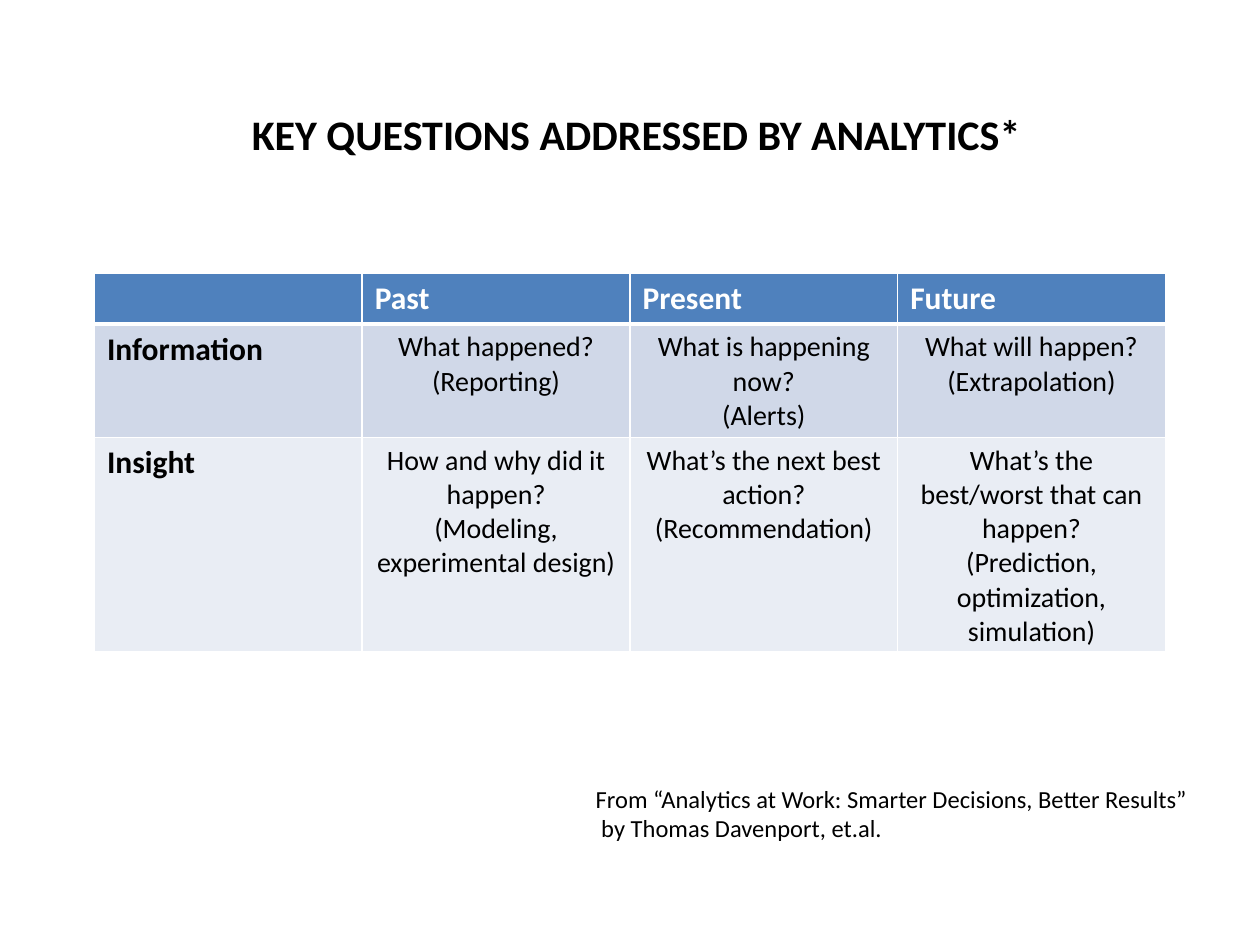
"""Build a slide with a table of the key questions addressed by analytics."""
from lxml import etree
from pptx import Presentation
from pptx.dml.color import RGBColor
from pptx.enum.text import MSO_AUTO_SIZE, PP_ALIGN
from pptx.oxml.ns import qn
from pptx.util import Inches, Pt

LEFT, CENTER = PP_ALIGN.LEFT, PP_ALIGN.CENTER
GROW = MSO_AUTO_SIZE.SHAPE_TO_FIT_TEXT
FONT = "Calibri"
COLORS = {"text": "000000", "white": "FFFFFF", "head": "4F81BD",
          "info": "D0D8E8", "insight": "E9EDF4"}

TITLE = "KEY QUESTIONS ADDRESSED BY ANALYTICS*"
SOURCE = ("From “Analytics at Work: Smarter Decisions, Better Results”\n"
          " by Thomas Davenport, et.al.")
ROWS = [
    ("head", 0.4, ["", "Past", "Present", "Future"]),
    ("info", 0.9, ["Information",
                   "What happened?\n(Reporting)",
                   "What is happening now?\n(Alerts)",
                   "What will happen?\n(Extrapolation)"]),
    ("insight", 1.7, ["Insight",
                      "How and why did it happen?\n(Modeling, experimental design)",
                      "What’s the next best action?\n(Recommendation)",
                      "What’s the best/worst that can happen?\n"
                      "(Prediction, optimization, simulation)"]),
]
TABLE = (0.75, 2.17, 8.5, sum(row[1] for row in ROWS))


def color(name):
    return RGBColor.from_string(COLORS[name])


def write(frame, text, size, bold=False, ink="text", align=LEFT):
    frame.text = text
    for para in frame.paragraphs:
        para.alignment = align
        para.font.size = Pt(size)
        for run in para.runs:
            font = run.font
            font.name, font.size, font.bold = FONT, Pt(size), bold
            font.color.rgb = color(ink)


def add_text(slide, box, text, size, bold=False):
    frame = slide.shapes.add_textbox(*map(Inches, box)).text_frame
    frame.word_wrap = False
    frame.auto_size = GROW
    write(frame, text, size, bold)


def add_edges(cell, widths):
    props = cell._tc.get_or_add_tcPr()
    for side, width in widths.items():
        line = etree.SubElement(props, qn(f"a:ln{side}"), w=str(Pt(width)))
        fill = etree.SubElement(line, qn("a:solidFill"))
        etree.SubElement(fill, qn("a:srgbClr"), val=COLORS["white"])


def add_grid(slide):
    count = len(ROWS[0][2])
    table = slide.shapes.add_table(len(ROWS), count, *map(Inches, TABLE)).table
    for col in table.columns:
        col.width = Inches(TABLE[2] / count)
    for r, (shade, height, texts) in enumerate(ROWS):
        table.rows[r].height = Inches(height)
        edges = {"L": 1, "R": 1, "T": 3 if r == 1 else 1, "B": 3 if r == 0 else 1}
        for c, text in enumerate(texts):
            cell = table.cell(r, c)
            label = r == 0 or c == 0
            add_edges(cell, edges)
            cell.fill.solid()
            cell.fill.fore_color.rgb = color(shade)
            write(cell.text_frame, text, 18 if label else 16, label,
                  "white" if r == 0 else "text", LEFT if label else CENTER)


def main():
    deck = Presentation()
    deck.slide_width, deck.slide_height = Inches(10), Inches(7.5)
    slide = deck.slides.add_slide(deck.slide_layouts[6])
    add_text(slide, (1.9, 0.81, 6.37, 0.5), TITLE, 24, True)
    add_text(slide, (4.63, 6.17, 4.94, 0.57), SOURCE, 14)
    add_grid(slide)
    deck.save("out.pptx")


if __name__ == "__main__":
    main()
